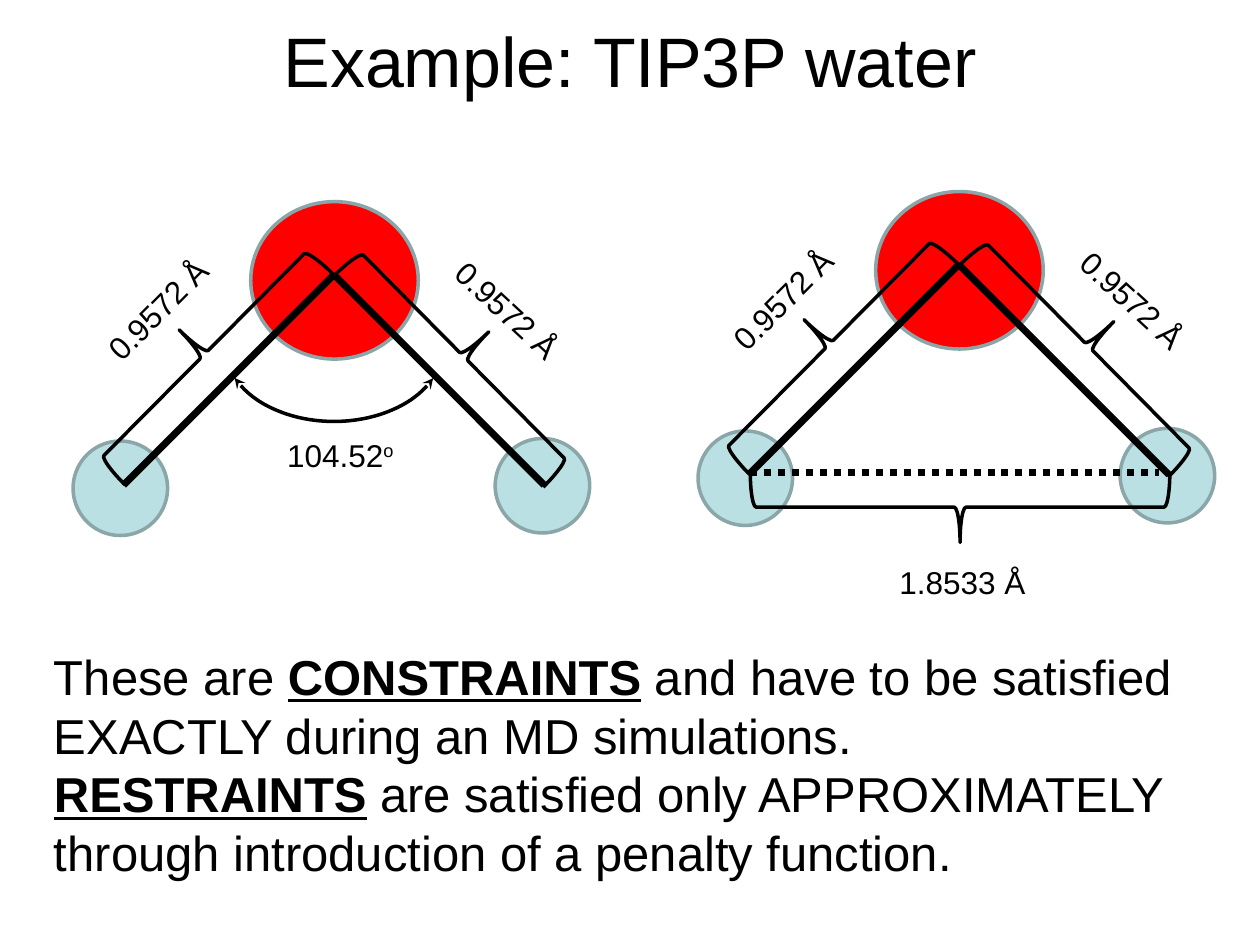
"""Build a slide comparing the constrained bonds, angle and distance of TIP3P water."""
from dataclasses import dataclass

from lxml import etree
from pptx import Presentation
from pptx.dml.color import RGBColor
from pptx.enum.dml import MSO_LINE
from pptx.enum.shapes import MSO_CONNECTOR, MSO_SHAPE
from pptx.enum.text import MSO_ANCHOR, MSO_AUTO_SIZE, PP_ALIGN
from pptx.oxml.ns import qn
from pptx.util import Inches, Pt

BLACK = RGBColor(0x00, 0x00, 0x00)
OXYGEN_RED = RGBColor(0xFF, 0x00, 0x00)
HYDROGEN_BLUE = RGBColor(0xBB, 0xE0, 0xE3)
OUTLINE_GREY = RGBColor(0x8A, 0xA6, 0xA8)

OVAL, BRACE, ARC = MSO_SHAPE.OVAL, MSO_SHAPE.LEFT_BRACE, MSO_SHAPE.ARC
STRAIGHT = MSO_CONNECTOR.STRAIGHT
DOTTED = MSO_LINE.ROUND_DOT
MIDDLE, CENTER = MSO_ANCHOR.MIDDLE, PP_ALIGN.CENTER
GROW = MSO_AUTO_SIZE.SHAPE_TO_FIT_TEXT

FONT = "Arial"
CELL = Inches(0.1)
COLUMNS, ROWS = 100, 75
ADJUSTMENT_PER_DEGREE = 0.6
ARC_START, ARC_END = 288.72, 71.44


@dataclass(frozen=True)
class Box:
    """An area in grid columns and rows, turned clockwise by degrees."""
    column: float
    row: float
    columns: float
    rows: float
    rotation: float = 0

    def moved(self, across: float, down: float) -> "Box":
        return Box(self.column + across, self.row + down,
                   self.columns, self.rows, self.rotation)

    def lengths(self) -> tuple:
        return tuple(round(value * CELL) for value in
                     (self.column, self.row, self.columns, self.rows))


@dataclass(frozen=True)
class Atom:
    """A circle for one atom."""
    box: Box
    color: RGBColor


@dataclass(frozen=True)
class Bond:
    """A bond with its length brace and length label."""
    end: tuple
    brace: Box
    label: Box


HYDROGEN_SIZE = 7.5
APEX = (26.5, 21.8)
ATOMS = (
    Atom(Box(5.8, 35, HYDROGEN_SIZE, HYDROGEN_SIZE), HYDROGEN_BLUE),
    Atom(Box(39.3, 34.8, HYDROGEN_SIZE, HYDROGEN_SIZE), HYDROGEN_BLUE),
    Atom(Box(19.9, 16, 13.3, 12.5), OXYGEN_RED),
)
BONDS = (
    Bond((9.8, 38.5), Box(13.4, 16.4, 5.6, 23.5, 44.8), Box(6.5, 22.5, 12.1, 4, 314.8)),
    Bond((43.2, 38.5), Box(34, 16.5, 5.6, 23.6, 135.3), Box(34.2, 22.8, 12.5, 4, 42.9)),
)
MOLECULE_OFFSETS = ((0, 0), (49.6, -0.8))
STATEMENTS = (
    (("These are ", False), ("CONSTRAINTS", True),
     (" and have to be satisfied EXACTLY during an MD simulations.", False)),
    (("RESTRAINTS", True),
     (" are satisfied only APPROXIMATELY through introduction of a penalty function.", False)),
)


def set_font(font, size: int) -> None:
    font.name, font.size = FONT, Pt(size)
    font.color.rgb = BLACK


def add_outline(slide, kind, box: Box, color: RGBColor, fill: RGBColor | None = None):
    shape = slide.shapes.add_shape(kind, *box.lengths())
    shape.rotation = box.rotation
    shape.shadow.inherit = False
    if fill is None:
        shape.fill.background()
    else:
        shape.fill.solid()
        shape.fill.fore_color.rgb = fill
    shape.line.color.rgb = color
    shape.line.width = Pt(2)
    return shape


def add_line(slide, start: tuple, end: tuple):
    connector = slide.shapes.add_connector(
        STRAIGHT, *(round(value * CELL) for value in (*start, *end)))
    connector.line.color.rgb = BLACK
    connector.line.width = Pt(4)
    etree.SubElement(connector._element.spPr, qn("a:effectLst"))
    return connector


def add_text(slide, box: Box, size: int, paragraphs: tuple) -> list:
    shape = slide.shapes.add_textbox(*box.lengths())
    shape.rotation = box.rotation
    frame = shape.text_frame
    frame.word_wrap = True
    frame.auto_size = GROW
    runs = []
    for index, pieces in enumerate(paragraphs):
        paragraph = frame.add_paragraph() if index else frame.paragraphs[0]
        set_font(paragraph.font, size)
        for text, emphasis in pieces:
            run = paragraph.add_run()
            run.text = text
            if emphasis:
                run.font.bold = run.font.underline = True
            runs.append(run)
    return runs


def add_label(slide, box: Box, *texts: str) -> list:
    return add_text(slide, box, 18, (tuple((text, False) for text in texts),))


def add_molecule(slide, across: float, down: float) -> None:
    for atom in ATOMS:
        add_outline(slide, OVAL, atom.box.moved(across, down), OUTLINE_GREY, atom.color)
    apex = (APEX[0] + across, APEX[1] + down)
    for bond in BONDS:
        add_line(slide, apex, (bond.end[0] + across, bond.end[1] + down))
        add_outline(slide, BRACE, bond.brace.moved(across, down), BLACK)
        add_label(slide, bond.label.moved(across, down), "0.9572 Å")


def add_angle(slide) -> None:
    arc = add_outline(slide, ARC, Box(20.4, 18.6, 12.2, 17.5, 90), BLACK)
    for index, degrees in enumerate((ARC_START, ARC_END)):
        arc.adjustments[index] = degrees * ADJUSTMENT_PER_DEGREE
    line = arc._element.spPr.find(qn("a:ln"))
    for end in ("a:headEnd", "a:tailEnd"):
        etree.SubElement(line, qn(end), type="stealth")
    degree = add_label(slide, Box(21.8, 34.1, 11.4, 4), "104.52", "o")[1]
    degree.font._element.set("baseline", "30000")


def add_distance(slide) -> None:
    add_label(slide, Box(70.4, 44.2, 15, 4), "1.8533 Å")
    add_outline(slide, BRACE, Box(73.4, 23.6, 5.6, 33.3, 270), BLACK)
    add_line(slide, (59.5, 37.5), (92, 37.5)).line.dash_style = DOTTED


def add_title(slide) -> None:
    title = slide.shapes.title
    title.left, title.top, title.width, title.height = Box(5, 0.8, 90, 7.8).lengths()
    title.text_frame.text = "Example: TIP3P water"
    title.text_frame.vertical_anchor = MIDDLE
    paragraph = title.text_frame.paragraphs[0]
    paragraph.alignment = CENTER
    set_font(paragraph.font, 40)


def main() -> None:
    presentation = Presentation()
    presentation.slide_width = COLUMNS * CELL
    presentation.slide_height = ROWS * CELL
    slide = presentation.slides.add_slide(presentation.slide_layouts.get_by_name("Title Only"))
    add_title(slide)
    for across, down in MOLECULE_OFFSETS:
        add_molecule(slide, across, down)
    add_angle(slide)
    add_distance(slide)
    add_text(slide, Box(3.3, 50.8, 94.2, 19.9), 28, STATEMENTS)
    presentation.save("out.pptx")


if __name__ == "__main__":
    main()
